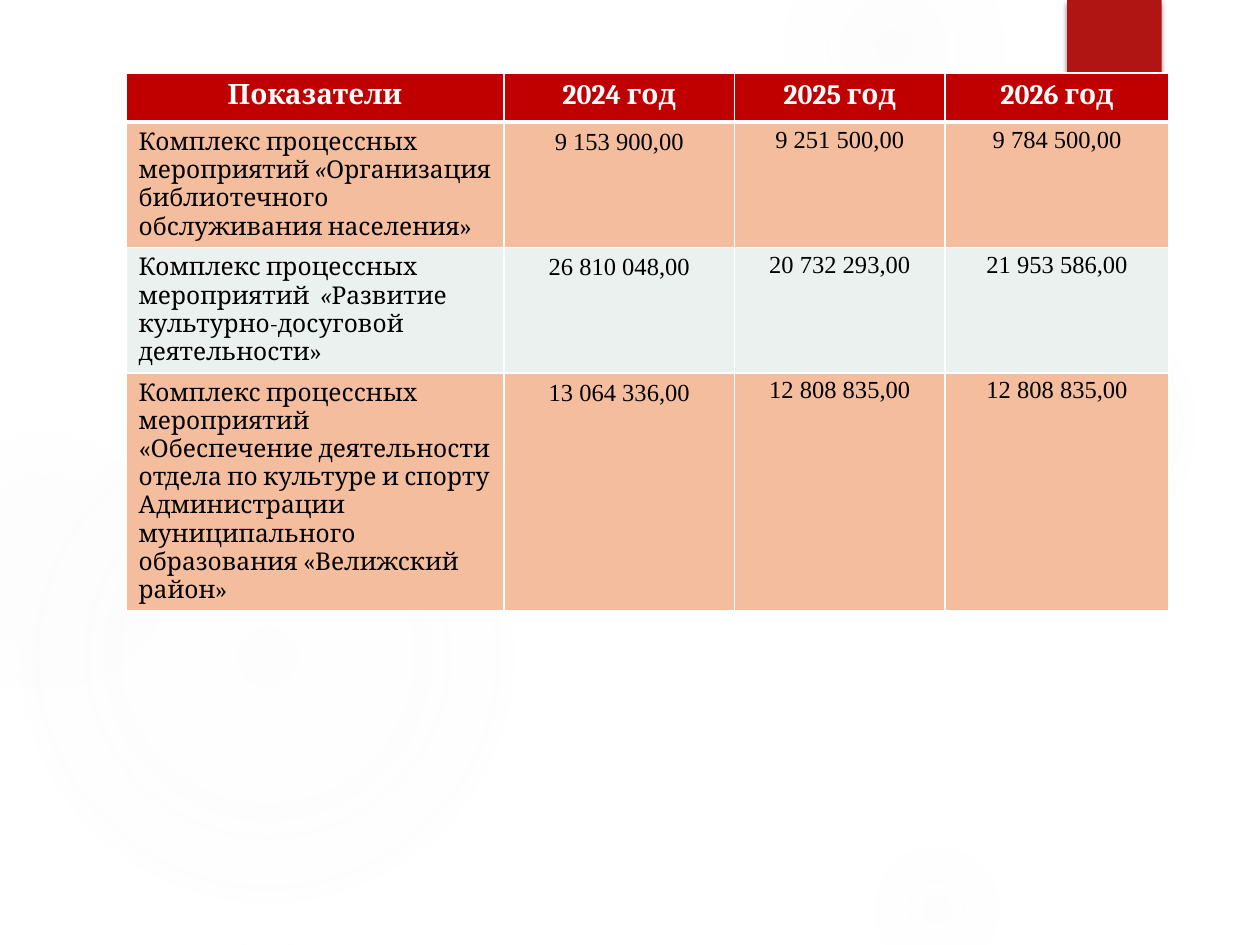
import pptx
import pptx.util
import pptx.dml.color
import pptx.enum.shapes
import pptx.enum.text
import pptx.oxml.ns
from lxml import etree

Inches = pptx.util.Inches
Pt = pptx.util.Pt
qn = pptx.oxml.ns.qn
SHAPE = pptx.enum.shapes.MSO_SHAPE


def color(code):
    return pptx.dml.color.RGBColor.from_string(code)


def node(parent, tag, **attrs):
    return etree.SubElement(parent, qn("a:" + tag),
                            {key: str(val) for key, val in attrs.items()})


def tint(parent, code, alpha):
    """Add a colour with an opacity in percent."""
    node(node(parent, "srgbClr", val=code), "alpha", val=alpha * 1000)


class Deck:
    head = "Cambria"
    body = "Times New Roman"
    red = "C00000"
    bands = ("F4BD9E", "EBF1EE")

    def __init__(self):
        self.file = pptx.Presentation()
        self.file.slide_width = Inches(10)
        self.file.slide_height = Inches(7.5)
        self.page = self.file.slides.add_slide(self.file.slide_layouts[6])

    def shape(self, kind, left, top, width, height):
        item = self.page.shapes.add_shape(
            kind, Inches(left), Inches(top), Inches(width), Inches(height))
        item.shadow.inherit = False
        item.line.fill.background()
        return item

    def glow(self, left, top, size, stops):
        """Draw a circle that fades out from its centre."""
        item = self.shape(SHAPE.OVAL, left, top, size, size)
        item.fill.background()
        props = item.fill._xPr
        grad = etree.Element(qn("a:gradFill"), rotWithShape="1")
        props.replace(props.find(qn("a:noFill")), grad)
        steps = node(grad, "gsLst")
        for pos, alpha in stops:
            tint(node(steps, "gs", pos=pos * 1000), "F3F3F3", alpha)
        way = node(grad, "path", path="circle")
        node(way, "fillToRect", l=50000, t=50000, r=50000, b=50000)

    def block(self, left, top, width, height, code):
        """Draw a plain rectangle with a soft shadow below it."""
        item = self.shape(SHAPE.RECTANGLE, left, top, width, height)
        item.fill.solid()
        item.fill.fore_color.rgb = color(code)
        fx = item._element.spPr.find(qn("a:effectLst"))
        cast = node(fx, "outerShdw", blurRad=Pt(3), dist=Pt(2),
                    dir=90 * 60000, rotWithShape=0)
        tint(cast, "000000", 45)

    def edges(self, cell, top=1, bottom=1):
        """Give a cell white borders."""
        props = cell._tc.get_or_add_tcPr()
        for side, width in zip("LRTB", (1, 1, top, bottom)):
            line = node(props, "ln" + side, w=Pt(width))
            node(node(line, "solidFill"), "srgbClr", val="FFFFFF")

    def cell(self, cell, runs, fill, font, size=14, ink="000000",
             bold=False, center=True, tight=False, top=1, bottom=1):
        self.edges(cell, top, bottom)
        cell.fill.solid()
        cell.fill.fore_color.rgb = color(fill)
        para = cell.text_frame.paragraphs[0]
        if center:
            para.alignment = pptx.enum.text.PP_ALIGN.CENTER
        if tight:
            para.line_spacing = 1.15
            cell.margin_left = cell.margin_right = 0
            cell.margin_top = cell.margin_bottom = 0
        for text, slant in runs:
            run = para.add_run()
            run.text = text
            run.font.name = font
            run.font.size = Pt(size)
            run.font.bold = bold
            run.font.italic = slant
            run.font.color.rgb = color(ink)

    def table(self, left, top, cols, highs, heads, rows):
        grid = self.page.shapes.add_table(
            len(highs), len(cols), Inches(left), Inches(top),
            Inches(sum(cols)), Inches(sum(highs))).table
        for col, width in zip(grid.columns, cols):
            col.width = Inches(width)
        for row, high in zip(grid.rows, highs):
            row.height = Inches(high)
        for x, text in enumerate(heads):
            self.cell(grid.cell(0, x), [(text, False)], self.red, self.head,
                      size=16, ink="FFFFFF", bold=True, bottom=3)
        for y, (label, sums) in enumerate(rows, 1):
            fill = self.bands[(y - 1) % 2]
            rim = 3 if y == 1 else 1
            self.cell(grid.cell(y, 0), label, fill, self.head,
                      center=False, top=rim)
            for x, text in enumerate(sums, 1):
                self.cell(grid.cell(y, x), [(text, False)], fill, self.body,
                          tight=x > 1, top=rim)


# Content
heads = ["Показатели", "2024 год", "2025 год", "2026 год"]
rows = [
    ([("Комплекс процессных мероприятий", False), (" «", True),
      ("Организация библиотечного обслуживания населения»", False)],
     ["9 153 900,00", "9 251 500,00", "9 784 500,00"]),
    ([("Комплекс процессных мероприятий ", False), (" «", True),
      ("Развитие культурно-досуговой деятельности»", False)],
     ["26 810 048,00", "20 732 293,00", "21 953 586,00"]),
    ([("Комплекс процессных мероприятий  «Обеспечение деятельности отдела "
       "по культуре и спорту Администрации муниципального образования "
       "«Велижский район»", False)],
     ["13 064 336,00", "12 808 835,00", "12 808 835,00"]),
]

# Backdrop: left, top, size, then (position, opacity) stops
glows = [
    (6.89, 1.83, 3.08, [(0, 7), (36, 6), (69, 0)]),
    (6.22, -0.5, 1.75, [(0, 14), (36, 7), (73, 0)]),
    (6.89, 6.67, 1.08, [(0, 9), (36, 5), (66, 0)]),
    (-0.17, 2.92, 4.58, [(0, 11), (36, 10), (75, 0)]),
    (-0.92, 3.17, 2.58, [(0, 8), (36, 8), (72, 0)]),
]

deck = Deck()
for glow in glows:
    deck.glow(*glow)
deck.block(8.47, 0, 0.75, 1.2, "B01513")

# Budget table
deck.table(1, 0.58, [3, 1.83, 1.67, 1.78], [0.39, 0.99, 0.99, 1.88],
           heads, rows)

deck.file.save("out.pptx")
